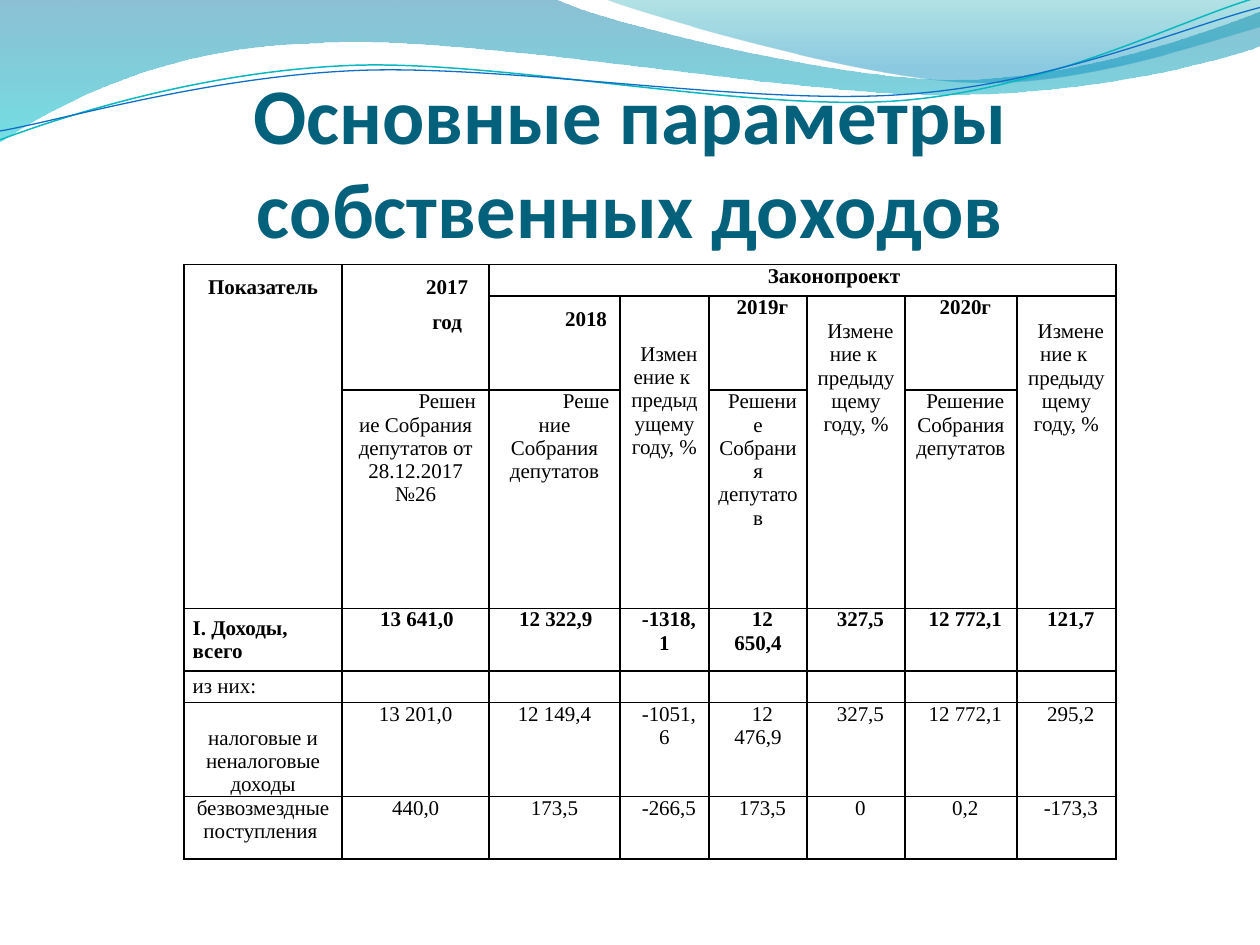
from dataclasses import dataclass
from math import cos, radians, sin

from lxml.etree import SubElement
from pptx import Presentation
from pptx.dml.color import RGBColor
from pptx.enum.text import MSO_ANCHOR, PP_ALIGN
from pptx.oxml.ns import qn
from pptx.util import Inches, Pt


@dataclass(frozen=True)
class Theme:
    title_color: str = "04617B"
    text_color: str = "000000"
    title_font: str = "Calibri"
    table_font: str = "Times New Roman"
    title_size: float = 45
    table_size: float = 12
    border_width: float = 1


@dataclass(frozen=True)
class Stop:
    position: float
    color: str
    opacity: int


@dataclass(frozen=True)
class Wave:
    start: tuple
    segments: tuple
    stops: tuple = ()
    line: str = ""
    width: float = 0
    rotation: float = 0
    pivot: tuple = (0, 0)


@dataclass(frozen=True)
class Cell:
    row: int
    col: int
    text: str
    indent: float = 0
    bold: bool = False
    spacing: float = 1
    align: PP_ALIGN = PP_ALIGN.CENTER
    anchor: MSO_ANCHOR = MSO_ANCHOR.TOP
    top: float = 0
    rows: int = 1
    cols: int = 1


THEME = Theme()
TABLE_WIDTH, TABLE_HEIGHT = 7.4, 4.72
COLS = (1.26, 1.17, 1.04, 0.71, 0.78, 0.78, 0.89, 0.79)
ROWS = (0.25, 0.75, 1.74, 0.5, 0.25, 0.5, 0.25, 0.5)
SPLIT_ROW = 5

WAVES = (
    Wave((0, 0), (
        (4.4, -0.01),
        (4.76, 0.17, 6.64, 0.63, 7.58, 0.63),
        (8.53, 0.63, 9.58, 0.26, 10, 0.09),
        (10.01, 0.36),
        (9.83, 0.44, 8.7, 0.76, 7.46, 0.75),
        (6.22, 0.75, 3.82, 0.28, 2.57, 0.34),
        (1.29, 0.36, 0.46, 0.83, -0.01, 1.13),
        (0, 0),
    ), stops=(Stop(0, "0074A1", 45), Stop(1, "00C6CF", 55))),
    Wave((4.79, -0.01), (
        (5.09, 0.11, 6.82, 0.62, 7.69, 0.65),
        (8.56, 0.69, 9.61, 0.32, 10, 0.21),
        (10, 0),
        (4.79, -0.01),
    ), stops=(Stop(0, "00A1A9", 30), Stop(0.8, "008BBF", 45))),
    Wave((0, 1.11), (
        (0.48, 0.93, 1.58, 0.57, 2.77, 0.52),
        (3.95, 0.47, 5.93, 0.89, 7.13, 0.8),
        (8.33, 0.71, 9.38, 0.15, 9.98, -0.02),
    ), line="0AB8BF", width=0.85, rotation=357.3, pivot=(4.99, 0.57)),
    Wave((0, 1.04), (
        (0.47, 0.96, 1.64, 0.61, 2.83, 0.56),
        (4.03, 0.51, 5.97, 0.84, 7.17, 0.75),
        (8.36, 0.67, 9.41, 0.21, 10, 0.06),
    ), line="0F6FC6", width=0.75, rotation=357.3, pivot=(5, 0.58)),
)

CHANGE = "Изменение к \vпредыдущему году, %"
DECISION = "Решение Собрания депутатов"
HEADERS = (
    Cell(0, 0, "Показатель", -0.07, True, 1.5, rows=3),
    Cell(0, 1, "2017\nгод", 0.5, True, 1.5, rows=2),
    Cell(0, 2, "Законопроект", 0.5, True, cols=6),
    Cell(1, 2, "2018", 0.5, True, 1.5),
    Cell(1, 4, "2019г", 0.07, True),
    Cell(1, 6, "2020г", 0.07, True),
    Cell(1, 3, CHANGE, 0.07, top=0.37, rows=2),
    Cell(1, 5, CHANGE, 0.07, top=0.19, rows=2),
    Cell(1, 7, CHANGE, 0.07, top=0.19, rows=2),
    Cell(2, 1, DECISION + " от 28.12.2017 №26", 0.5),
    Cell(2, 2, DECISION, 0.5),
    Cell(2, 4, DECISION, 0.07),
    Cell(2, 6, DECISION, 0.07),
)
LABELS = (
    Cell(3, 0, "I. Доходы, всего", bold=True, align=PP_ALIGN.LEFT, anchor=MSO_ANCHOR.MIDDLE),
    Cell(4, 0, "из них:", align=PP_ALIGN.LEFT, anchor=MSO_ANCHOR.MIDDLE),
    Cell(5, 0, "налоговые и неналоговые доходы", anchor=MSO_ANCHOR.BOTTOM, rows=2),
    Cell(7, 0, "безвозмездные поступления "),
)
VALUES = {
    3: ("13 641,0", "12 322,9", "-1318,1", "12 650,4", "327,5", "12 772,1", "121,7"),
    5: ("13 201,0", "12 149,4", "-1051,6", "12 476,9", "327,5", "12 772,1", "295,2"),
    7: ("440,0", "173,5", "-266,5", "173,5", "0", "0,2", "-173,3"),
}


def write(tf, text: str, *, font: str, size: float, color: str, bold: bool = False,
          align: PP_ALIGN = PP_ALIGN.CENTER, indent: float = 0, spacing: float = 1) -> None:
    tf.text = text
    for p in tf.paragraphs:
        p.alignment = align
        p.line_spacing = spacing
        pPr = p._p.get_or_add_pPr()
        pPr.set("marL", "0")
        pPr.set("indent", str(Inches(indent)))
        for br in p._p.findall(qn("a:br")):
            SubElement(br, qn("a:rPr")).set("sz", str(int(size * 100)))
        for r in p.runs:
            r.font.name = font
            r.font.size = Pt(size)
            r.font.bold = bold
            r.font.color.rgb = RGBColor.from_string(color)
        if not p.runs:
            p._p.get_or_add_endParaRPr().set("sz", str(int(size * 100)))


def place(wave: Wave, x: float, y: float) -> tuple:
    angle = radians(-wave.rotation)
    px, py = wave.pivot
    dx, dy = x - px, y - py
    return (Inches(px + dx * cos(angle) - dy * sin(angle)),
            Inches(py + dx * sin(angle) + dy * cos(angle)))


def draw_wave(s, wave: Wave) -> None:
    curves = [[place(wave, *seg[i:i + 2]) for i in range(0, len(seg), 2)]
              for seg in wave.segments]
    builder = s.shapes.build_freeform(*place(wave, *wave.start), scale=1.0)
    builder.add_line_segments([points[-1] for points in curves], close=bool(wave.stops))
    sp = builder.convert_to_shape()
    for ln, points in zip(list(sp._element.iter(qn("a:lnTo"))), curves):
        if len(points) == 3:
            bezier = ln.makeelement(qn("a:cubicBezTo"))
            for x, y in points:
                SubElement(bezier, qn("a:pt"), x=str(x - sp.left), y=str(y - sp.top))
            ln.getparent().replace(ln, bezier)
    sp.rotation = wave.rotation
    sp.shadow.inherit = False
    if wave.stops:
        sp.line.fill.background()
        sp.fill.gradient()
        sp.fill.gradient_angle = 270
        for target, stop in zip(sp.fill.gradient_stops, wave.stops):
            target.position = stop.position
            target.color.rgb = RGBColor.from_string(stop.color)
            clr = target._gs.find(qn("a:srgbClr"))
            SubElement(clr, qn("a:alpha")).set("val", str(stop.opacity * 1000))
    else:
        sp.fill.background()
        sp.line.color.rgb = RGBColor.from_string(wave.line)
        sp.line.width = Pt(wave.width)


def set_borders(cell, hidden: str) -> None:
    tcPr = cell._tc.get_or_add_tcPr()
    for i, side in enumerate("LRTB"):
        ln = tcPr.makeelement(qn(f"a:ln{side}"), {"w": str(Pt(THEME.border_width))})
        if side == hidden:
            SubElement(ln, qn("a:noFill"))
        else:
            fill = SubElement(ln, qn("a:solidFill"))
            SubElement(fill, qn("a:srgbClr")).set("val", THEME.text_color)
        tcPr.insert(i, ln)


def fill_cell(table, item: Cell) -> None:
    cell = table.cell(item.row, item.col)
    if item.rows > 1 or item.cols > 1:
        cell.merge(table.cell(item.row + item.rows - 1, item.col + item.cols - 1))
    cell.vertical_anchor = item.anchor
    cell.margin_top = Inches(item.top)
    write(cell.text_frame, item.text, font=THEME.table_font, size=THEME.table_size,
          color=THEME.text_color, bold=item.bold, align=item.align,
          indent=item.indent, spacing=item.spacing)


def draw_table(s) -> None:
    table = s.shapes.add_table(len(ROWS), len(COLS), Inches(1.46), Inches(2.1),
                               Inches(TABLE_WIDTH), Inches(TABLE_HEIGHT)).table
    table.first_row = table.horz_banding = False
    for col, width in zip(table.columns, COLS):
        col.width = Inches(width * TABLE_WIDTH / sum(COLS))
    for row, height in zip(table.rows, ROWS):
        row.height = Inches(height * TABLE_HEIGHT / sum(ROWS))
    for r in range(len(ROWS)):
        for c in range(len(COLS)):
            cell = table.cell(r, c)
            cell.fill.background()
            cell.margin_left = cell.margin_right = Inches(0.07)
            cell.margin_bottom = 0
            set_borders(cell, {SPLIT_ROW: "B", SPLIT_ROW + 1: "T"}.get(r, "") if c else "")
            fill_cell(table, Cell(r, c, ""))
    for item in HEADERS + LABELS:
        fill_cell(table, item)
    for r, values in VALUES.items():
        lead = 0.02 if r == 3 else -0.07
        for c, value in enumerate(values, 1):
            fill_cell(table, Cell(r, c, value, lead if c < 3 else 0.07, r == 3))


def draw_title(s) -> None:
    tf = s.shapes.add_textbox(Inches(0.5), Inches(0.77), Inches(9), Inches(1.25)).text_frame
    tf.word_wrap = True
    tf.vertical_anchor = MSO_ANCHOR.BOTTOM
    tf.margin_left = tf.margin_right = tf.margin_bottom = 0
    write(tf, "Основные параметры собственных доходов", font=THEME.title_font,
          size=THEME.title_size, color=THEME.title_color, bold=True)


def main() -> None:
    prs = Presentation()
    prs.slide_width, prs.slide_height = Inches(10), Inches(7.5)
    s = prs.slides.add_slide(prs.slide_layouts[6])
    for wave in WAVES:
        draw_wave(s, wave)
    draw_title(s)
    draw_table(s)
    prs.save("out.pptx")


if __name__ == "__main__":
    main()
